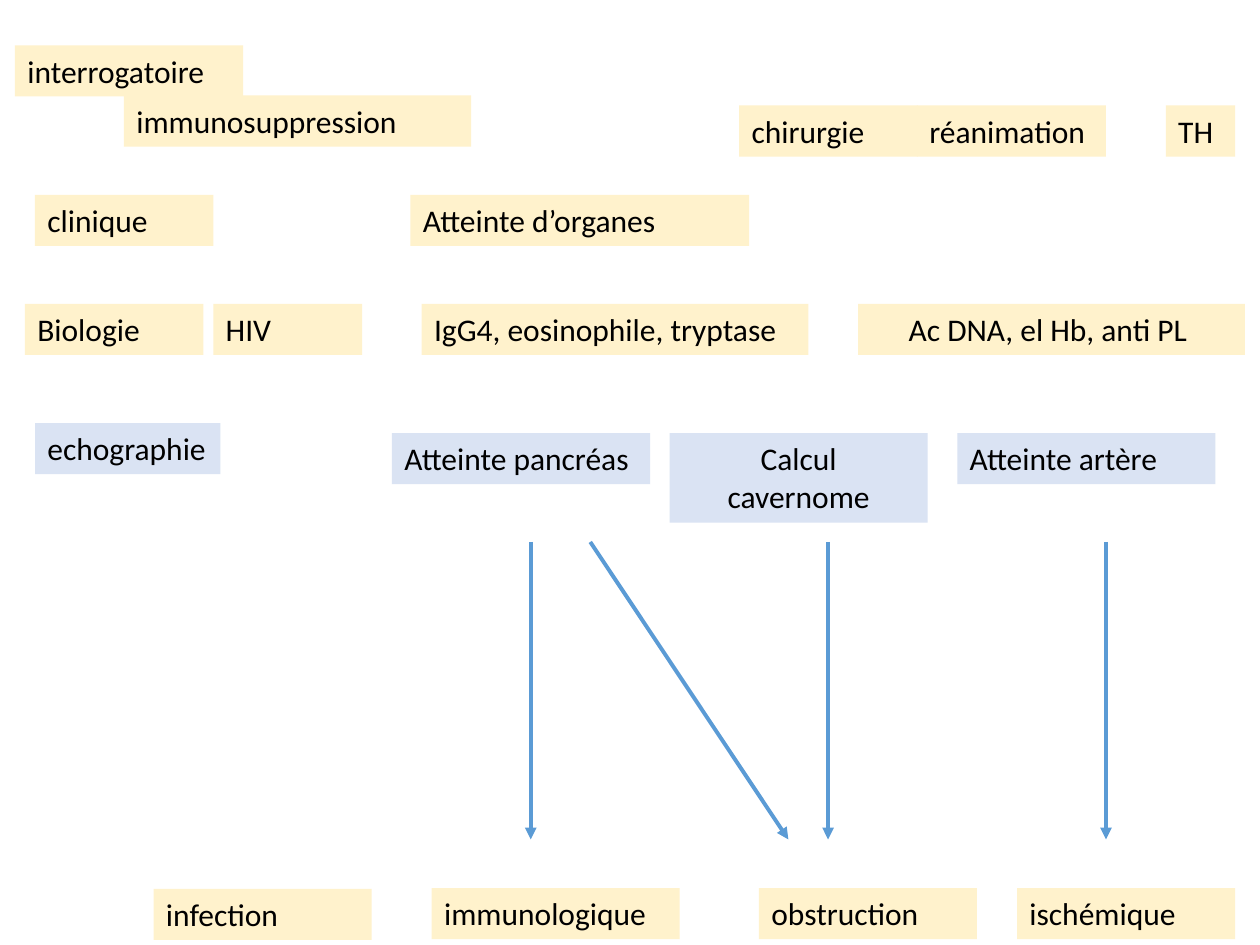
import pptx
import pptx.util
import pptx.dml.color
import pptx.enum.shapes
import pptx.enum.text
import lxml.etree
from pptx.oxml.ns import qn

Pt = pptx.util.Pt
CREAM, PALE, BLUE, BLACK = "FFF2CC", "DAE3F3", "5B9BD5", "000000"
LINE, PAD = 22, 7.2

# top, fill, boxes as (text, left, width)
ROWS = [
    (26, CREAM, [("interrogatoire", 8.6, 130.4)]),
    (54.6, CREAM, [("immunosuppression", 70.8, 198.4)]),
    (60.3, CREAM, [("réanimation", 524, 108), ("chirurgie", 422.4, 102),
                   ("TH", 666.2, 39.6)]),
    (111.4, CREAM, [("clinique", 20, 102), ("Atteinte d’organes", 234.6, 193.5)]),
    (173.7, CREAM, [("Biologie", 14.3, 102), ("HIV", 121.9, 85),
                    ("IgG4, eosinophile, tryptase", 241, 221),
                    ("Ac DNA, el Hb, anti PL ", 490.4, 221)]),
    (241.8, PALE, [("echographie", 20, 106)]),
    (247.5, PALE, [("Atteinte pancréas", 224, 147.5),
                   ("Calcul\ncavernome", 382.6, 147.5),
                   ("Atteinte artère", 547, 147.5)]),
    (508, CREAM, [("infection", 87.8, 124.6)]),
    (507.5, CREAM, [("immunologique", 246.7, 141.7), ("obstruction", 433.7, 124.6),
                    ("ischémique", 581.2, 124.6)]),
]
CENTRED = {"Calcul\ncavernome", "Ac DNA, el Hb, anti PL "}
TIGHT = {"echographie"}  # kept on one line

# arrows as (start x, end x), all between the same two heights
ARROWS = [(303.3, 303.3), (473.2, 473.2), (632, 632), (337.3, 450.5)]
START, END = 309.7, 479.7


def color(code):
    return pptx.dml.color.RGBColor.from_string(code)


def add_box(slide, text, left, top, width, fill):
    lines = text.split("\n")
    height = LINE * len(lines) + PAD
    box = slide.shapes.add_textbox(Pt(left), Pt(top), Pt(width), Pt(height))
    box.fill.solid()
    box.fill.fore_color.rgb = color(fill)
    frame = box.text_frame
    frame.word_wrap = text not in TIGHT
    frame.auto_size = pptx.enum.text.MSO_AUTO_SIZE.SHAPE_TO_FIT_TEXT
    frame.text = text
    for para in frame.paragraphs:
        para.font.name = "Calibri"
        para.font.size = Pt(18)
        para.font.color.rgb = color(BLACK)
        if text in CENTRED:
            para.alignment = pptx.enum.text.PP_ALIGN.CENTER


def add_arrow(slide, start, end):
    arrow = slide.shapes.add_connector(
        pptx.enum.shapes.MSO_CONNECTOR.STRAIGHT,
        Pt(start), Pt(START), Pt(end), Pt(END))
    arrow.line.color.rgb = color(BLUE)
    arrow.line.width = Pt(2.25)
    props = arrow.line._get_or_add_ln()
    lxml.etree.SubElement(props, qn("a:tailEnd"), type="triangle")
    lxml.etree.SubElement(props.getparent(), qn("a:effectLst"))


def main():
    deck = pptx.Presentation()
    deck.slide_width, deck.slide_height = Pt(720), Pt(540)
    slide = deck.slides.add_slide(deck.slide_layouts[6])
    for top, fill, boxes in ROWS:
        for text, left, width in boxes:
            add_box(slide, text, left, top, width, fill)
    for start, end in ARROWS:
        add_arrow(slide, start, end)
    deck.save("out.pptx")


if __name__ == "__main__":
    main()
